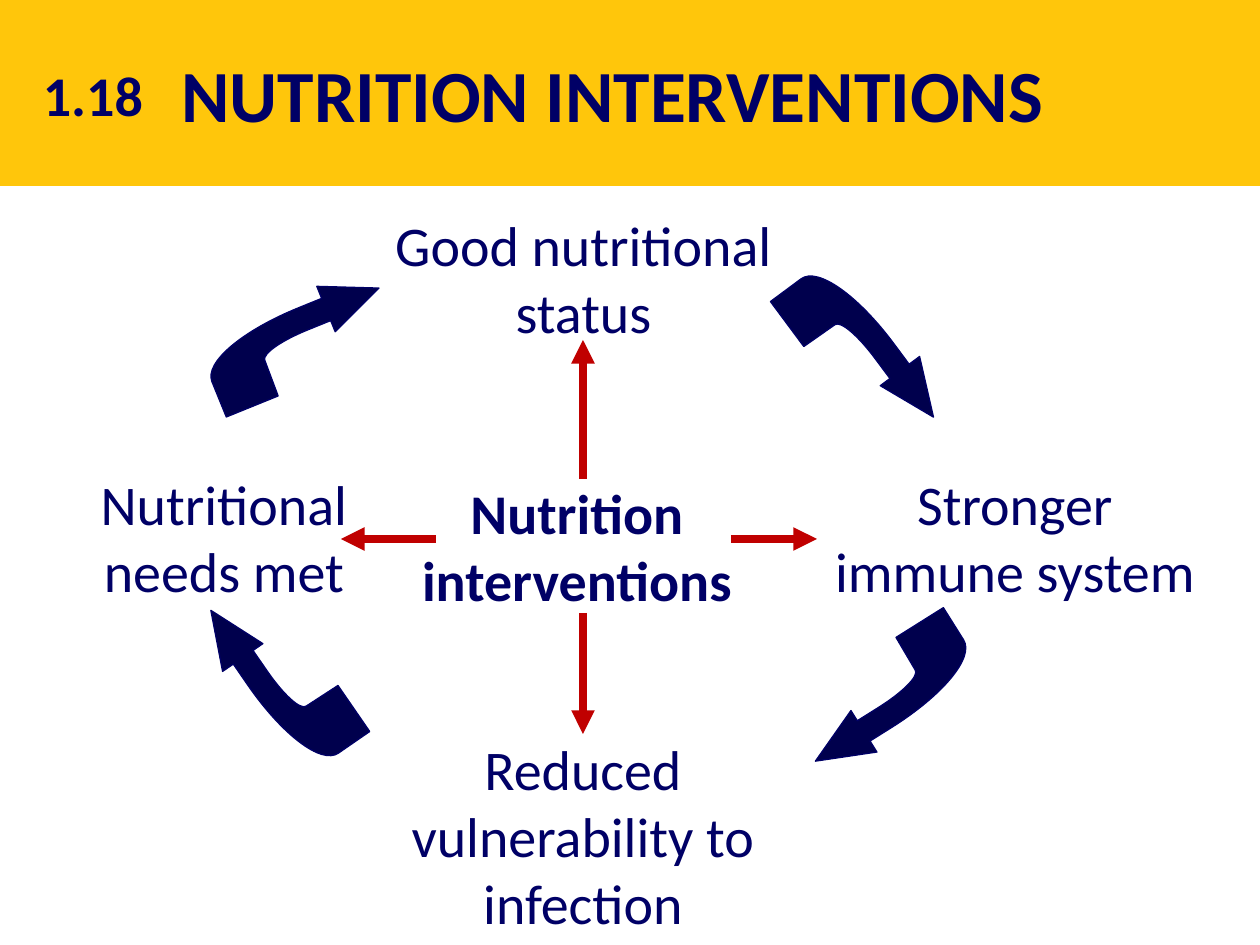
from lxml import etree
from pptx import Presentation
from pptx.dml.color import RGBColor
from pptx.enum.shapes import MSO_CONNECTOR, MSO_SHAPE
from pptx.enum.text import MSO_ANCHOR, PP_ALIGN
from pptx.oxml.ns import qn
from pptx.util import Pt

PX = 914400 // 126
FONT = "Calibri"
COLORS = {"band": "FFC60B", "text": "000066", "cycle": "00004D", "spoke": "C00000"}

TITLE = "NUTRITION INTERVENTIONS"
# text, (left, top, width, height), bold, wraps
LABELS = [
    ("Good nutritional status", (359, 204, 449, 149), False, True),
    ("Nutritional needs met", (81, 463, 286, 149), False, True),
    ("Stronger\vimmune system", (795, 463, 440, 149), False, True),
    ("Reduced vulnerability to infection", (341, 728, 484, 217), False, True),
    ("Nutrition\ninterventions", (404, 472, 346, 149), True, True),
    ("1.18", (30, 54, 126, 81), True, False),
]
# centre x, centre y, rotation
CYCLE_ARROWS = [(862, 352, 53.4), (886, 695, 147.9), (298, 341, 337.9), (280, 678, 235.4)]
# start x, start y, end x, end y
SPOKES = [(583, 613, 583, 734), (436, 539, 341, 539), (583, 479, 583, 340), (731, 539, 817, 539)]

# Unrotated cycle arrow; each curve starts at a listed point and takes the next three
ARROW_SIZE = (190, 87)
ARROW_OUTLINE = [
    (190, 25), (133, 0), (133, 13), (108, 13),
    (48, 13), (0, 28), (0, 49),
    (0, 87), (56, 87), (57, 49),
    (57, 42), (80, 37), (108, 37),
    (133, 37), (133, 49),
]
CURVE_STARTS = (3, 9)


def color(name):
    return RGBColor.from_string(COLORS[name])


def place(shape, left, top, width, height):
    shape.left, shape.top = left * PX, top * PX
    shape.width, shape.height = width * PX, height * PX


def format_text(frame, size, bold, alignment):
    frame.vertical_anchor = MSO_ANCHOR.TOP
    for para in frame.paragraphs:
        para.alignment = alignment
        for span in para.runs:
            span.font.name, span.font.size, span.font.bold = FONT, Pt(size), bold
            span.font.color.rgb = color("text")


def add_band(slide):
    band = slide.shapes.add_shape(MSO_SHAPE.RECTANGLE, 0, 0, 1260 * PX, 186 * PX)
    band.shadow.inherit = False
    band.fill.solid()
    band.fill.fore_color.rgb = color("band")
    band.line.fill.background()
    slide.shapes._spTree.insert(2, band._element)  # behind the title


def add_label(slide, text, frame_px, bold, wraps):
    box = slide.shapes.add_textbox(*(value * PX for value in frame_px))
    box.text_frame.word_wrap = wraps
    box.text_frame.text = text
    format_text(box.text_frame, 32, bold, PP_ALIGN.CENTER)


def bend(shape, curve_starts):
    """Turn the three segments after each start into one cubic curve."""
    outline = next(shape._element.iter(qn("a:moveTo"))).getparent()
    segments = list(outline)
    for start in curve_starts:
        curve = etree.Element(qn("a:cubicBezTo"))
        segments[start].addnext(curve)
        for segment in segments[start + 1:start + 4]:
            curve.append(segment[0])
            outline.remove(segment)


def add_cycle_arrow(slide, center_x, center_y, rotation):
    points = [(x * PX, y * PX) for x, y in ARROW_OUTLINE]
    builder = slide.shapes.build_freeform(*points[0])
    builder.add_line_segments(points[1:], close=True)
    width, height = ARROW_SIZE
    arrow = builder.convert_to_shape(round((center_x - width / 2) * PX),
                                     round((center_y - height / 2) * PX))
    bend(arrow, CURVE_STARTS)
    arrow.rotation = rotation
    arrow.shadow.inherit = False
    arrow.fill.solid()
    arrow.fill.fore_color.rgb = color("cycle")
    arrow.line.color.rgb = color("text")
    arrow.line.width = Pt(0.75)


def add_spoke(slide, *ends):
    spoke = slide.shapes.add_connector(MSO_CONNECTOR.STRAIGHT, *(value * PX for value in ends))
    spoke.line.color.rgb = color("spoke")
    spoke.line.width = Pt(4.5)
    etree.SubElement(spoke.line._get_or_add_ln(), qn("a:tailEnd"), type="triangle")
    etree.SubElement(spoke._element.spPr, qn("a:effectLst"))


def main():
    deck = Presentation()
    deck.slide_width, deck.slide_height = 1260 * PX, 945 * PX
    slide = deck.slides.add_slide(deck.slide_layouts[5])
    add_band(slide)
    title = slide.shapes.title
    place(title, 169, 43, 1091, 76)
    title.text_frame.text = TITLE
    format_text(title.text_frame, 42, True, PP_ALIGN.LEFT)
    for arrow in CYCLE_ARROWS:
        add_cycle_arrow(slide, *arrow)
    for spoke in SPOKES:
        add_spoke(slide, *spoke)
    for label in LABELS:
        add_label(slide, *label)
    deck.save("out.pptx")


if __name__ == "__main__":
    main()
